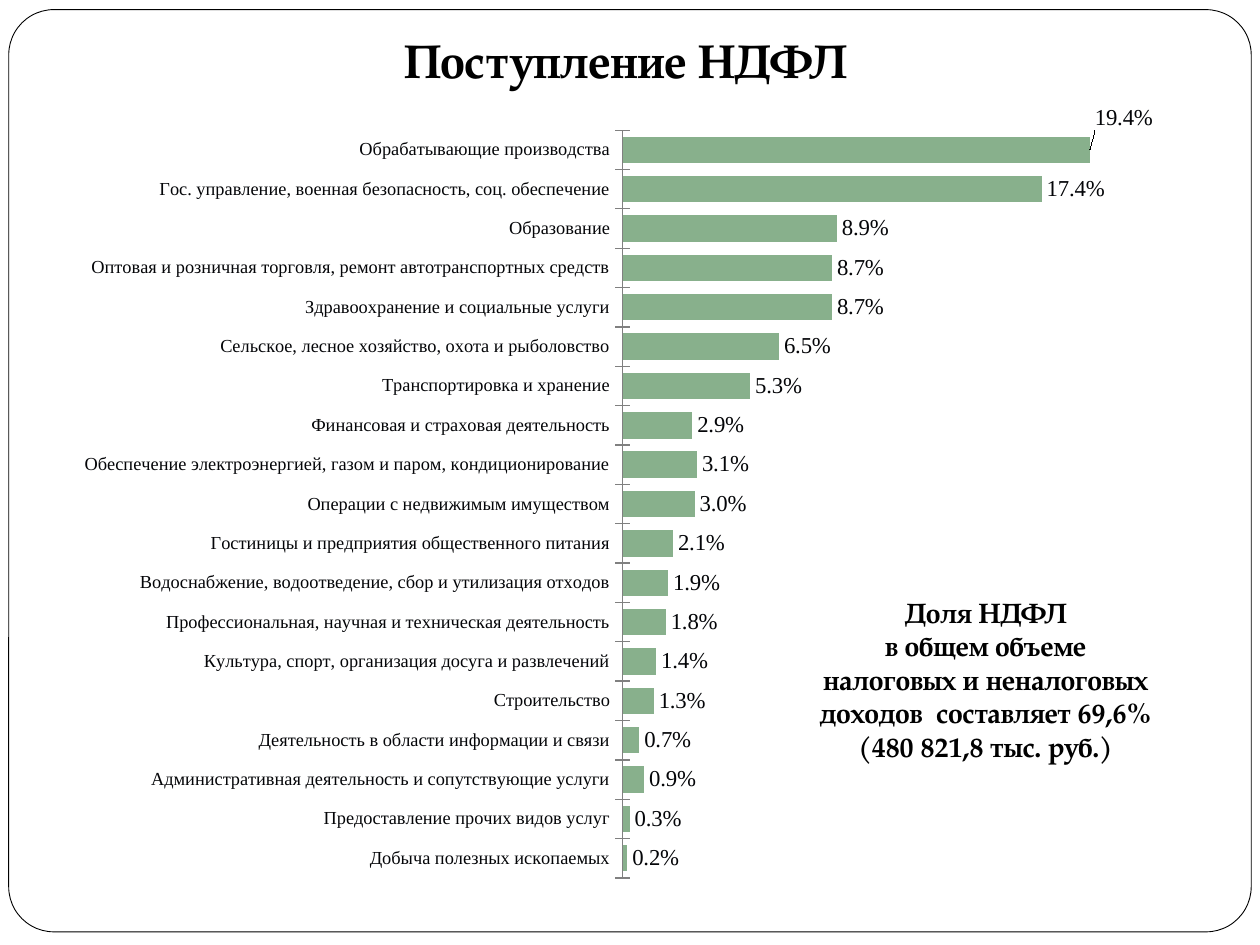
from typing import NamedTuple

from lxml.etree import SubElement
from pptx import Presentation
from pptx.chart.data import CategoryChartData
from pptx.dml.color import RGBColor
from pptx.enum.chart import XL_CHART_TYPE, XL_LABEL_POSITION, XL_TICK_LABEL_POSITION, XL_TICK_MARK
from pptx.enum.shapes import MSO_SHAPE
from pptx.enum.text import MSO_ANCHOR, MSO_AUTO_SIZE, PP_ALIGN
from pptx.oxml import parse_xml
from pptx.oxml.ns import nsdecls, qn
from pptx.util import Pt

HEADING_FONT = "TeX Gyre Pagella"
CHART_FONT = "Times New Roman"
BLACK, INK, GREEN, GREY, WHITE = "000000", "040508", "88B08C", "808080", "FFFFFF"
PERCENT = "0.0%"


class Box(NamedTuple):
    left: float
    top: float
    width: float
    height: float

    def lengths(self) -> list:
        return [Pt(value) for value in self]


class Industry(NamedTuple):
    name: str
    share: float


# Bars from bottom to top
INDUSTRIES = [
    Industry("Добыча полезных ископаемых", 0.002),
    Industry("Предоставление прочих видов услуг", 0.003),
    Industry("Административная деятельность и сопутствующие услуги", 0.009),
    Industry("Деятельность в области информации и связи", 0.007),
    Industry("Строительство", 0.013),
    Industry("Культура, спорт, организация досуга и развлечений", 0.014),
    Industry("Профессиональная, научная и техническая деятельность", 0.018),
    Industry("Водоснабжение, водоотведение, сбор и утилизация отходов", 0.019),
    Industry("Гостиницы и предприятия общественного питания", 0.021),
    Industry("Операции с недвижимым имуществом", 0.03),
    Industry("Обеспечение электроэнергией, газом и паром, кондиционирование", 0.031),
    Industry("Финансовая и страховая деятельность", 0.029),
    Industry("Транспортировка и хранение", 0.053),
    Industry("Сельское, лесное хозяйство, охота и рыболовство", 0.065),
    Industry("Здравоохранение и социальные услуги", 0.087),
    Industry("Оптовая и розничная торговля, ремонт автотранспортных средств", 0.087),
    Industry("Образование", 0.089),
    Industry("Гос. управление, военная безопасность, соц. обеспечение", 0.174),
    Industry("Обрабатывающие производства", 0.194),
]
NOTE = "\n".join([
    "Доля НДФЛ",
    "в общем объеме",
    "налоговых и неналоговых доходов  составляет 69,6%",
    "(480 821,8 тыс. руб.)",
])


def color(value: str) -> RGBColor:
    return RGBColor.from_string(value)


def style_font(font, name: str, size: float, ink: str, bold: bool = False) -> None:
    font.name, font.size, font.bold = name, Pt(size), bold
    font.color.rgb = color(ink)


def write_text(shape, text: str, size: float) -> None:
    frame = shape.text_frame
    frame.text = text
    frame.word_wrap = True
    frame.auto_size = MSO_AUTO_SIZE.NONE
    frame.vertical_anchor = MSO_ANCHOR.BOTTOM
    for para in frame.paragraphs:
        para.alignment = PP_ALIGN.CENTER
        for span in para.runs:
            style_font(span.font, HEADING_FONT, size, BLACK, bold=True)


def manual_layout(**values) -> object:
    layout = parse_xml(f"<c:layout {nsdecls('c')}><c:manualLayout/></c:layout>")
    for tag, value in values.items():
        SubElement(layout[0], qn(f"c:{tag}")).set("val", str(value))
    return layout


def add_frame(page, box: Box) -> None:
    frame = page.shapes.add_shape(MSO_SHAPE.ROUNDED_RECTANGLE, *box.lengths())
    frame.adjustments[0] = 0.049
    frame.shadow.inherit = False
    frame.fill.solid()
    frame.fill.fore_color.rgb = color(WHITE)
    frame.line.color.rgb = color(BLACK)
    frame.line.width = Pt(0.5)
    # Send behind the title
    frame.element.getparent().insert(2, frame.element)


def style_labels(labels) -> None:
    style_font(labels.font, CHART_FONT, 13, INK)
    labels.position = XL_LABEL_POSITION.OUTSIDE_END


def add_industry_chart(page, box: Box) -> None:
    data = CategoryChartData(number_format=PERCENT)
    data.categories = [industry.name for industry in INDUSTRIES]
    data.add_series("Series 1", [industry.share for industry in INDUSTRIES])
    chart = page.shapes.add_chart(XL_CHART_TYPE.BAR_CLUSTERED, *box.lengths(), data).chart
    chart.has_legend = chart.has_title = False
    style_font(chart.font, CHART_FONT, 18, BLACK)

    # Axes
    names = chart.category_axis
    names.major_tick_mark = XL_TICK_MARK.CROSS
    names.tick_label_position = XL_TICK_LABEL_POSITION.LOW
    names.has_major_gridlines = False
    names.format.line.color.rgb = color(GREY)
    style_font(names.tick_labels.font, CHART_FONT, 10.5, INK)
    shares = chart.value_axis
    shares.visible = shares.has_major_gridlines = False
    shares.minimum_scale, shares.maximum_scale = 0, 0.25

    # Bars and their labels
    plot = chart.plots[0]
    plot.gap_width = 49
    plot.vary_by_categories = False
    series = plot.series[0]
    series.format.fill.solid()
    series.format.fill.fore_color.rgb = color(GREEN)
    labels = series.data_labels
    labels.show_value = True
    labels.number_format, labels.number_format_is_linked = PERCENT, False
    style_labels(labels)

    # The longest bar has its label raised
    last = len(INDUSTRIES) - 1
    style_labels(series.points[last].data_label)
    raised = labels._element.find(qn("c:dLbl"))
    raised.insert(1, manual_layout(x=0, y=-0.04))

    # Fixed plot area
    area = chart.element.find(f".//{qn('c:plotArea')}")
    for old in area.findall(qn("c:layout")):
        area.remove(old)
    area.insert(0, manual_layout(layoutTarget="inner", xMode="edge", yMode="edge",
                                 x=0.49, y=0.027, w=0.51, h=0.946))


def main() -> None:
    deck = Presentation()
    deck.slide_width, deck.slide_height = Pt(720), Pt(540)
    page = deck.slides.add_slide(deck.slide_layouts[5])

    add_frame(page, Box(5, 5.5, 710, 527))
    add_industry_chart(page, Box(25, 60.5, 675, 453.5))

    # Title
    title = page.shapes.title
    title.left, title.top, title.width, title.height = Box(39.5, 22.5, 636, 35).lengths()
    write_text(title, "Поступление НДФЛ", 27)
    title.text_frame.margin_bottom = Pt(7.2)

    # Note on the share of the tax
    note = page.shapes.add_textbox(*Box(444, 343.5, 238.5, 96).lengths())
    write_text(note, NOTE, 16)

    deck.save("out.pptx")


if __name__ == "__main__":
    main()
